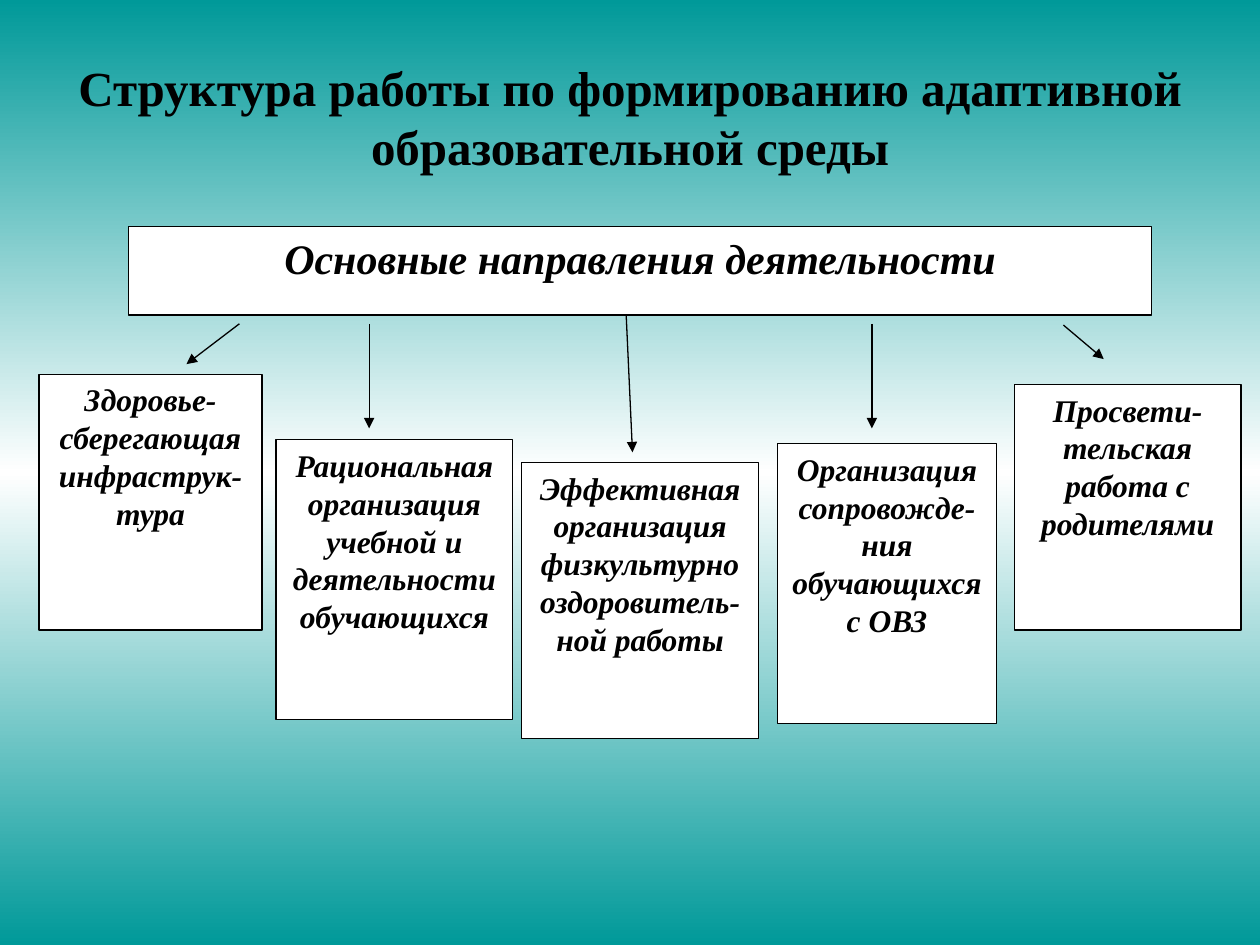
from copy import deepcopy

from lxml import etree
from pptx import Presentation
from pptx import util as u
from pptx.dml.color import RGBColor
from pptx.enum import shapes, text
from pptx.oxml.ns import qn

BLACK = RGBColor(0x00, 0x00, 0x00)
WHITE = RGBColor(0xFF, 0xFF, 0xFF)
TEAL = RGBColor(0x00, 0x99, 0x99)
FONT = "Times New Roman"

# Content: paragraphs, box (left, top, width, height), arrow (from, to), in inches
TITLE = "Структура работы по формированию адаптивной образовательной среды"
HEADING = ["Основные направления деятельности"]
HEADING_BOX = (1.02, 1.8, 8.12, 0.7)
DIRECTIONS = [
    (["Здоровье-", "сберегающая инфраструк-", "тура"],
     (0.31, 2.97, 1.77, 2.03), (1.9, 2.57, 1.48, 2.89)),
    (["Рациональная организация учебной и деятельности обучающихся"],
     (2.19, 3.49, 1.88, 2.22), (2.93, 2.57, 2.93, 3.4)),
    (["Эффективная организация физкультурно оздоровитель-", "ной работы"],
     (4.14, 3.67, 1.88, 2.19), (4.97, 2.5, 5.02, 3.59)),
    (["Организация сопровожде-ния обучающихся с ОВЗ"],
     (6.17, 3.52, 1.74, 2.22), (6.92, 2.57, 6.92, 3.4)),
    (["Просвети-тельская работа с родителями"],
     (8.05, 3.05, 1.8, 1.95), (8.44, 2.58, 8.76, 2.85)),
]


def inches(values):
    return [u.Inches(v) for v in values]


def write(tf, lines, size, anchor, italic=True):
    tf.word_wrap = True
    tf.auto_size = text.MSO_AUTO_SIZE.NONE
    tf.vertical_anchor = anchor
    tf.text = "\n".join(lines)
    for p in tf.paragraphs:
        p.alignment = text.PP_ALIGN.CENTER
        p.font.name, p.font.size = FONT, u.Pt(size)
        p.font.bold, p.font.italic = True, italic
        p.font.color.rgb = BLACK


def outline(line):
    line.color.rgb = BLACK
    line.width = u.Pt(0.75)


def add_box(s, lines, box, size):
    sp = s.shapes.add_shape(shapes.MSO_SHAPE.RECTANGLE, *inches(box))
    sp.shadow.inherit = False
    sp.fill.solid()
    sp.fill.fore_color.rgb = WHITE
    outline(sp.line)
    write(sp.text_frame, lines, size, text.MSO_ANCHOR.TOP)


def add_arrow(s, ends):
    cn = s.shapes.add_connector(shapes.MSO_CONNECTOR.STRAIGHT, *inches(ends))
    outline(cn.line)
    etree.SubElement(cn.line._get_or_add_ln(), qn("a:tailEnd"), type="triangle")
    etree.SubElement(cn._element.spPr, qn("a:effectLst"))


def set_background(s):
    fill = s.background.fill
    fill.gradient()
    fill.gradient_angle = 90
    stops = next(s.element.iter(qn("a:gsLst")))
    stops.insert(1, deepcopy(stops[0]))
    for stop, position, color in zip(fill.gradient_stops, (0, 0.5, 1), (TEAL, WHITE, TEAL)):
        stop.position = position
        stop.color.rgb = color


def main():
    prs = Presentation()
    prs.slide_width, prs.slide_height = inches((10, 7.5))
    s = prs.slides.add_slide(prs.slide_layouts[5])
    set_background(s)

    # Title
    title = s.shapes.title
    title.left, title.top, title.width, title.height = inches((0.5, 0.3, 9, 1.25))
    write(title.text_frame, [TITLE], 28, text.MSO_ANCHOR.MIDDLE, italic=False)

    # Heading with an arrow to each direction
    add_box(s, HEADING, HEADING_BOX, 24)
    for lines, box, ends in DIRECTIONS:
        add_box(s, lines, box, 18)
        add_arrow(s, ends)

    prs.save("out.pptx")


if __name__ == "__main__":
    main()
